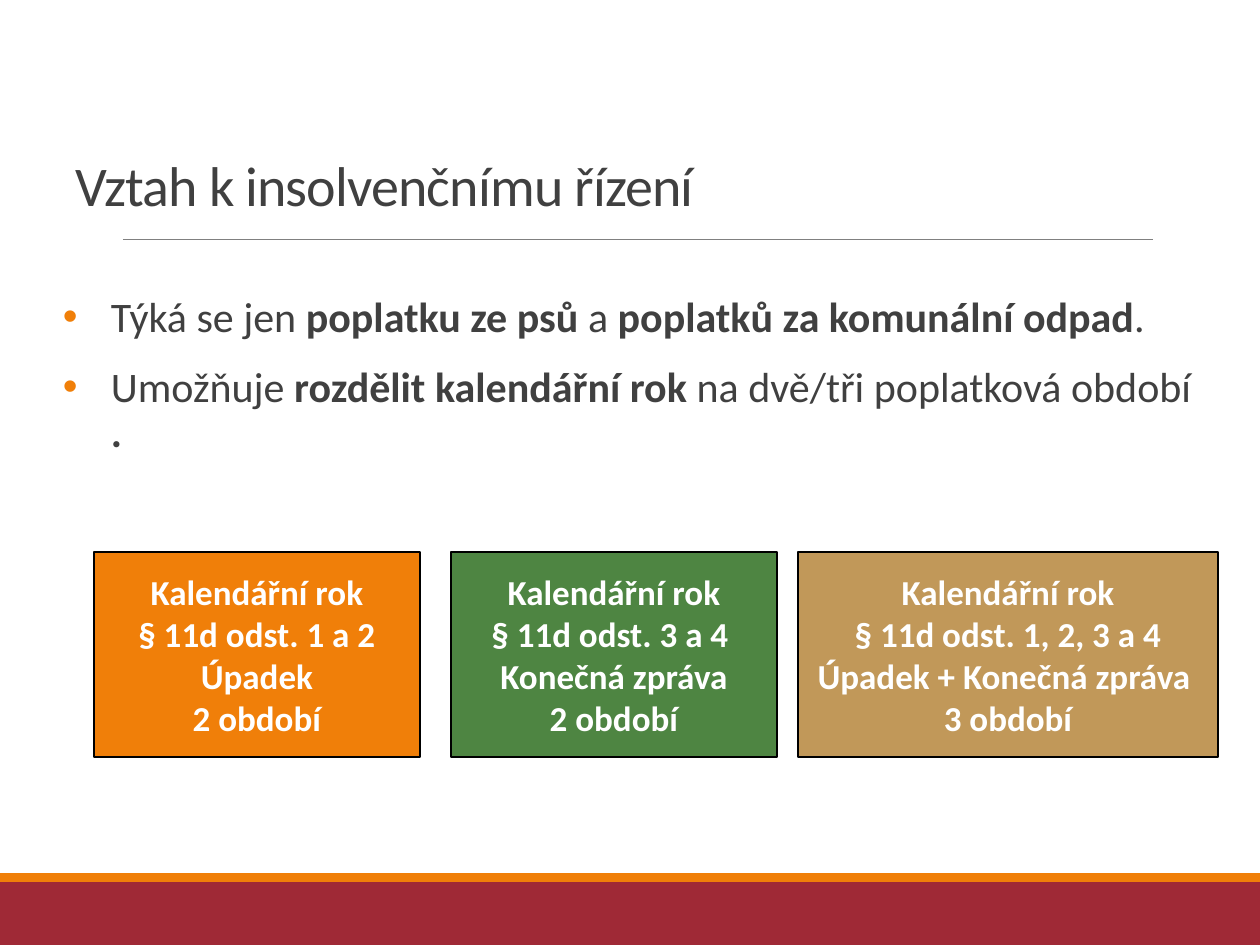
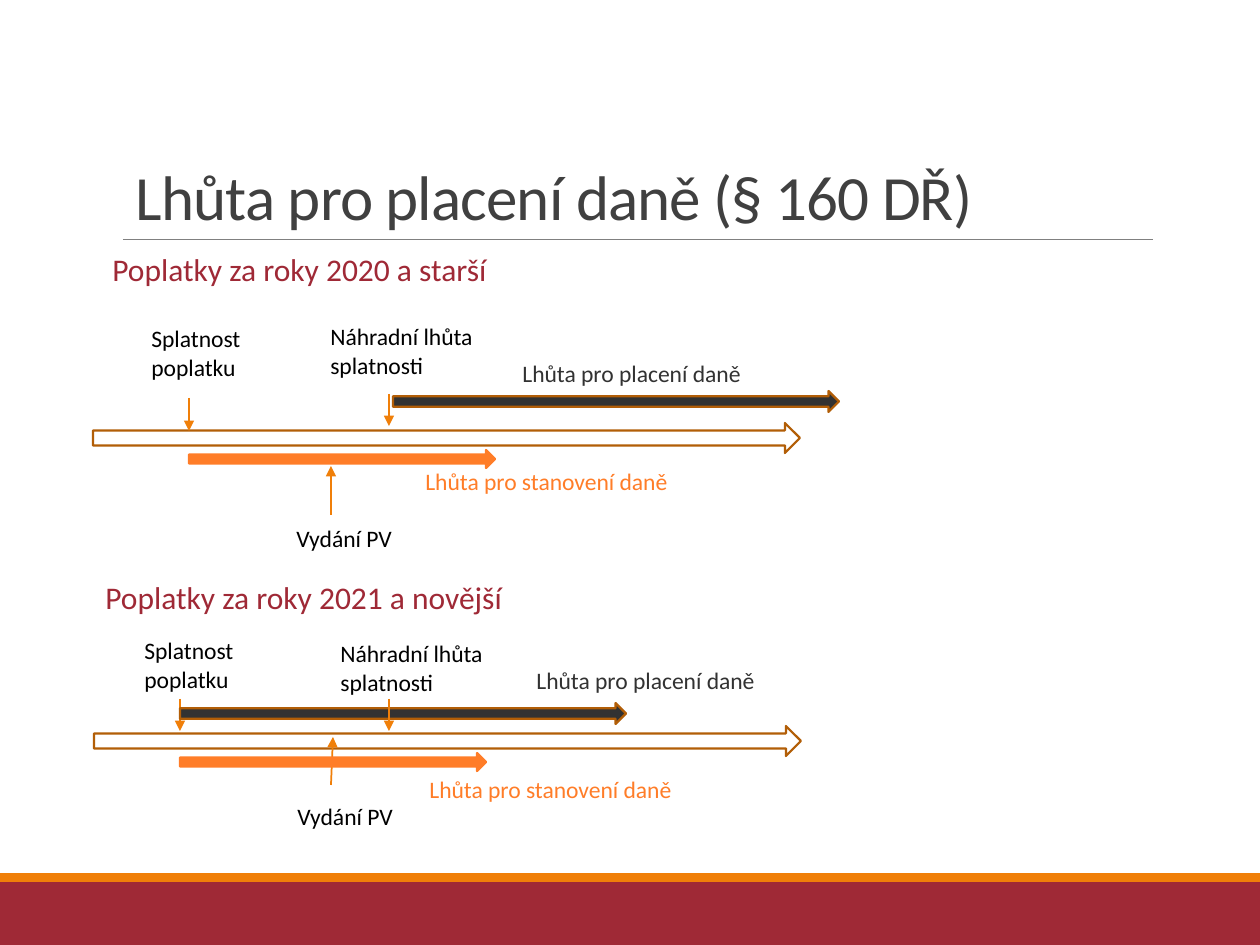
"""Builds two slides on local fees: insolvency periods and payment deadlines."""
from lxml.etree import SubElement
from pptx import Presentation
from pptx.dml.color import RGBColor
from pptx.enum.shapes import MSO_CONNECTOR, MSO_SHAPE
from pptx.enum.text import MSO_ANCHOR, MSO_AUTO_SIZE, PP_ALIGN
from pptx.oxml.ns import qn
from pptx.util import Emu, Pt

FONT = "Calibri"
COLORS = {
    "red": "9F2936", "orange": "F07F09", "rule": "808080", "grey": "404040",
    "green": "4E8542", "tan": "C19859", "white": "FFFFFF", "black": "000000",
    "brown": "B25E07", "dark": "323232", "bright": "FF7D28",
}

BULLETS = [
    [("Týká se jen ", False), ("poplatku ze psů ", True), ("a ", False),
     ("poplatků za komunální odpad", True), (".", False)],
    [("Umožňuje", False), (" rozdělit kalendářní rok ", True),
     ("na dvě/tři poplatková období ", False), (".", True)],
]
PERIODS = [
    ("orange", (94, 552, 326, 205),
     ["Kalendářní rok", "§ 11d odst. 1 a 2", "Úpadek", "2 období"]),
    ("green", (451, 552, 326, 205),
     ["Kalendářní rok", "§ 11d odst. 3 a 4 ", "Konečná zpráva", "2 období"]),
    ("tan", (798, 552, 420, 205),
     ["Kalendářní rok", "§ 11d odst. 1, 2, 3 a 4", "Úpadek + Konečná zpráva ", "3 období"]),
]

LABELS = {
    "due": ("Splatnost poplatku", "black"),
    "order": ("Vydání PV", "black"),
    "new_due": ("Náhradní lhůta splatnosti", "black"),
    "assess": ("Lhůta pro stanovení daně", "bright"),
    "pay": ("Lhůta pro placení daně", "dark"),
}
BARS = {
    "axis": ("white", "brown", 707, 30),
    "assess": ("bright", "bright", 306, 18),
    "pay": ("dark", "brown", 446, 21),
}
TIMELINES = [
    {
        "heading": ("Poplatky za roky 2020 a starší", (100, 244, 403, 50)),
        "bars": {"axis": (93, 423), "assess": (189, 450), "pay": (393, 391)},
        "markers": {"due": (189, 398, 189, 431), "order": (331, 515, 331, 466),
                    "new_due": (389, 394, 389, 426)},
        "labels": {"due": (139, 318, 126, 71), "order": (284, 518, 241, 42),
                   "new_due": (318, 316, 175, 71), "assess": (413, 461, 658, 42),
                   "pay": (510, 353, 257, 42)},
    },
    {
        "heading": ("Poplatky za roky 2021 a novější", (93, 572, 426, 50)),
        "bars": {"axis": (94, 726), "assess": (180, 753), "pay": (180, 703)},
        "markers": {"due": (180, 699, 180, 731), "order": (331, 785, 333, 737),
                    "new_due": (389, 699, 389, 731)},
        "labels": {"due": (132, 630, 151, 71), "order": (285, 796, 241, 42),
                   "new_due": (328, 633, 174, 71), "assess": (417, 769, 664, 42),
                   "pay": (524, 660, 664, 42)},
    },
]


def px(*values):
    return [Emu(round(v * 914400 / 126)) for v in values]


def rgb(name):
    return RGBColor.from_string(COLORS[name])


def style(p, size, color, bold=False):
    for r in p.runs:
        r.font.name = FONT
        r.font.size = Pt(size)
        r.font.bold = bold
        r.font.color.rgb = rgb(color)


def add_box(s, kind, box, fill, line=None):
    sp = s.shapes.add_shape(kind, *px(*box))
    sp.shadow.inherit = False
    sp.fill.solid()
    sp.fill.fore_color.rgb = rgb(fill)
    if line:
        sp.line.color.rgb = rgb(line)
        sp.line.width = Pt(1.25)
    else:
        sp.line.fill.background()
    return sp


def add_line(s, ends, color, width, arrow=False):
    c = s.shapes.add_connector(MSO_CONNECTOR.STRAIGHT, *px(*ends))
    c.line.color.rgb = rgb(color)
    c.line.width = Pt(width)
    if arrow:
        SubElement(c.line._get_or_add_ln(), qn("a:tailEnd"), type="triangle")
    SubElement(c._element.spPr, qn("a:effectLst"))


def add_text(s, text, box, size, color, wrap=True):
    tf = s.shapes.add_textbox(*px(*box)).text_frame
    tf.word_wrap = wrap
    tf.auto_size = MSO_AUTO_SIZE.SHAPE_TO_FIT_TEXT
    tf.text = text
    style(tf.paragraphs[0], size, color)


def add_slide(prs, title, box, size):
    s = prs.slides.add_slide(prs.slide_layouts[5])
    add_box(s, MSO_SHAPE.RECTANGLE, (0, 882, 1260, 63), "red")
    add_box(s, MSO_SHAPE.RECTANGLE, (0, 873, 1260, 9), "orange")
    add_line(s, (123, 239, 1153, 239), "rule", 0.5)
    sp = s.shapes.title
    sp.left, sp.top, sp.width, sp.height = px(*box)
    tf = sp.text_frame
    tf.text = title
    tf.auto_size = MSO_AUTO_SIZE.NONE
    tf.vertical_anchor = MSO_ANCHOR.BOTTOM
    p = tf.paragraphs[0]
    p.alignment = PP_ALIGN.LEFT
    p.line_spacing = 0.85
    style(p, size, "grey")
    p.runs[0].font._element.set("spc", "-50")
    return s


def add_bullets(s, items, box):
    tf = s.shapes.add_textbox(*px(*box)).text_frame
    tf.word_wrap = True
    tf.margin_left = tf.margin_right = 0
    for i, item in enumerate(items):
        p = tf.add_paragraph() if i else tf.paragraphs[0]
        for text, bold in item:
            p.add_run().text = text
        style(p, 24, "grey")
        for r, (_, bold) in zip(p.runs, item):
            r.font.bold = bold
        p.line_spacing = 0.9
        p.space_before, p.space_after = Pt(12), Pt(2)
        pPr = p._p.get_or_add_pPr()
        indent = px(48)[0]
        pPr.set("marL", str(indent))
        pPr.set("indent", str(-indent))
        SubElement(SubElement(pPr, qn("a:buClr")), qn("a:srgbClr"), val=COLORS["orange"])
        SubElement(pPr, qn("a:buFont"), typeface="Arial")
        SubElement(pPr, qn("a:buChar"), char="•")


def add_period(s, color, box, lines):
    tf = add_box(s, MSO_SHAPE.RECTANGLE, box, color, "black").text_frame
    tf.text = "\n".join(lines)
    tf.vertical_anchor = MSO_ANCHOR.MIDDLE
    for p in tf.paragraphs:
        p.alignment = PP_ALIGN.CENTER
        style(p, 20, "white", True)


def add_timeline(s, heading, bars, markers, labels):
    def add_bar(name):
        fill, line, width, height = BARS[name]
        add_box(s, MSO_SHAPE.RIGHT_ARROW, (*bars[name], width, height), fill, line)

    def add_marker(name):
        add_line(s, markers[name], "orange", 1, arrow=True)

    add_text(s, *heading, 18, "red", wrap=False)
    add_bar("axis")
    add_marker("due")
    add_marker("order")
    add_bar("assess")
    add_bar("pay")
    add_marker("new_due")
    for name, box in labels.items():
        text, color = LABELS[name]
        add_text(s, text, box, 13.5, color)


def main():
    prs = Presentation()
    prs.slide_width, prs.slide_height = px(1260, 945)

    s = add_slide(prs, "Vztah k insolvenčnímu řízení", (63, 39, 1090, 185), 32)
    add_bullets(s, BULLETS, (63, 290, 1134, 655))
    for period in PERIODS:
        add_period(s, *period)

    s = add_slide(prs, "Lhůta pro placení daně (§ 160 DŘ)", (123, 105, 951, 135), 36)
    for timeline in TIMELINES:
        add_timeline(s, **timeline)

    prs.save("out.pptx")


if __name__ == "__main__":
    main()
